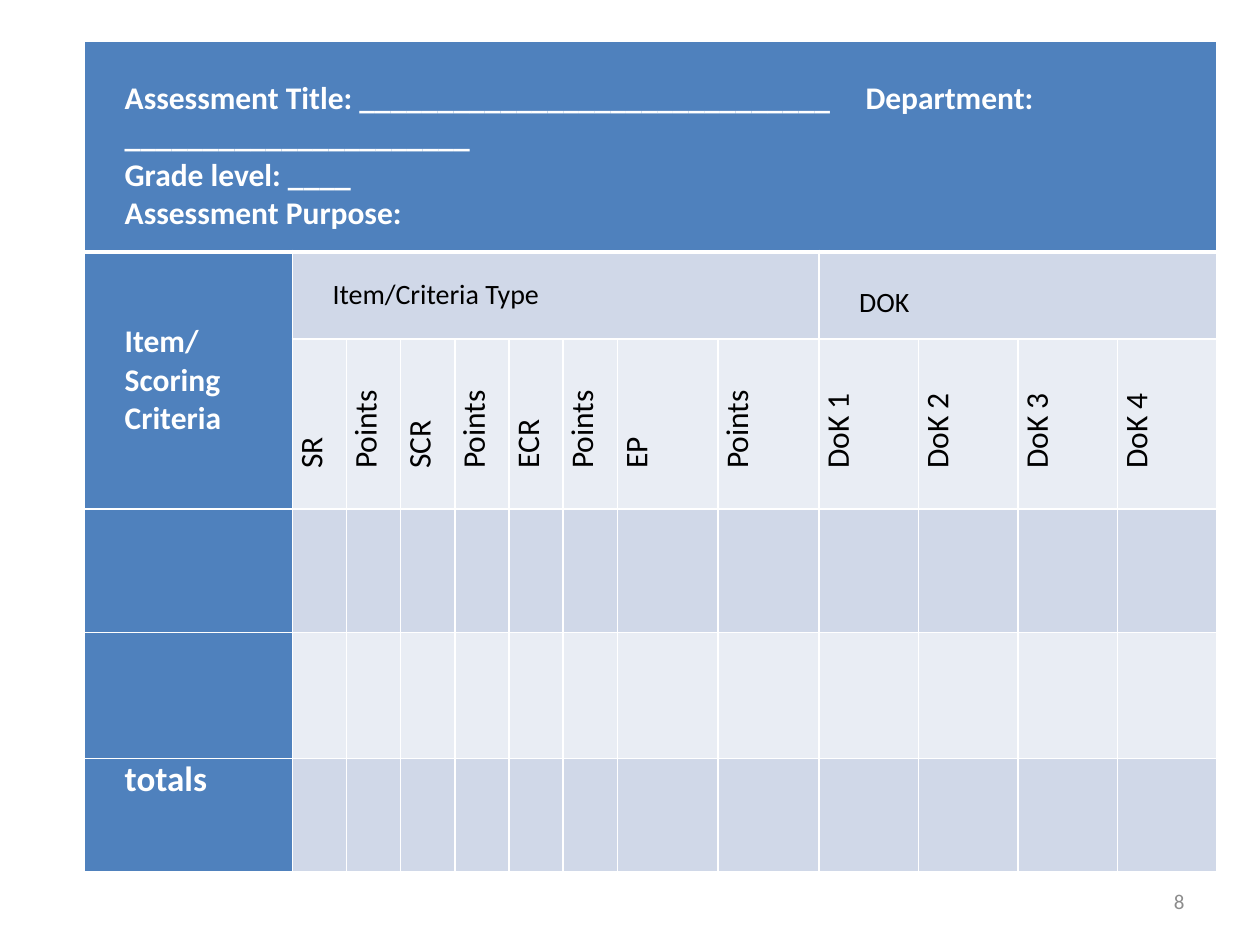
from lxml.etree import SubElement
from pptx import Presentation
from pptx.dml.color import RGBColor
from pptx.enum.text import MSO_ANCHOR as ANCHOR, PP_ALIGN as ALIGN
from pptx.oxml.ns import qn
from pptx.util import Inches, Pt

BLUE = RGBColor(0x4F, 0x81, 0xBD)
BAND_DARK = RGBColor(0xD0, 0xD8, 0xE8)
BAND_LIGHT = RGBColor(0xE9, 0xED, 0xF4)
WHITE = RGBColor(0xFF, 0xFF, 0xFF)
BLACK = RGBColor(0, 0, 0)
GRAY = RGBColor(0x8C, 0x8C, 0x8C)

COL_WIDTHS = [1.65] + [0.43] * 6 + [0.8] * 2 + [0.79] * 4
ROW_HEIGHTS = [1.67, 0.69, 1.35, 0.98, 1, 0.9]
ITEM_TYPES = ["SR", "SCR", "ECR", "EP"]


def style_cell(cell, fill, bottom_width):
    tcPr = cell._tc.get_or_add_tcPr()
    for side in ("lnL", "lnR", "lnT", "lnB"):
        width = bottom_width if side == "lnB" else 1
        ln = SubElement(tcPr, qn(f"a:{side}"), w=str(Pt(width)))
        SubElement(SubElement(ln, qn("a:solidFill")), qn("a:srgbClr"), val=str(WHITE))
    cell.fill.solid()
    cell.fill.fore_color.rgb = fill
    cell.margin_left = cell.margin_right = Inches(0.07)
    cell.margin_top = cell.margin_bottom = 0


def write_cell(cell, lines, size, color, bold=False, anchor=ANCHOR.MIDDLE, indent=0.25):
    cell.vertical_anchor = anchor
    tf = cell.text_frame
    for i, line in enumerate(lines):
        p = tf.paragraphs[0] if i == 0 else tf.add_paragraph()
        p._p.get_or_add_pPr().set("marL", str(Inches(indent)))
        r = p.add_run()
        r.text = line
        r.font.name = "Calibri"
        r.font.size = Pt(size)
        r.font.bold = bold
        r.font.color.rgb = color


prs = Presentation()
prs.slide_width = Inches(10)
prs.slide_height = Inches(7.5)
s = prs.slides.add_slide(prs.slide_layouts[6])

table = s.shapes.add_table(
    len(ROW_HEIGHTS), len(COL_WIDTHS),
    Inches(0.67), Inches(0.33), Inches(9), Inches(6.59),
).table
for col, width in zip(table.columns, COL_WIDTHS):
    col.width = Inches(width)
for row, height in zip(table.rows, ROW_HEIGHTS):
    row.height = Inches(height)

for i, row in enumerate(table.rows):
    for j, cell in enumerate(row.cells):
        if i == 0 or j == 0:
            fill = BLUE
        else:
            fill = BAND_DARK if i % 2 else BAND_LIGHT
        style_cell(cell, fill, 3 if i == 0 else 1)

header = table.cell(0, 0)
header.merge(table.cell(0, 12))
header.margin_left = Inches(0.32)
header.margin_top = Inches(0.3)
write_cell(header, [
    "Assessment Title: " + "_" * 30 + "\tDepartment: " + "_" * 22,
    "Grade level: ____",
    "Assessment Purpose:",
], 18, WHITE, bold=True, anchor=ANCHOR.TOP, indent=0)
pPr = header.text_frame.paragraphs[0]._p.get_or_add_pPr()
SubElement(SubElement(pPr, qn("a:tabLst")), qn("a:tab"), pos=str(Inches(5.88)), algn="l")

criteria = table.cell(1, 0)
criteria.merge(table.cell(2, 0))
write_cell(criteria, ["Item/", "Scoring Criteria"], 18, WHITE, bold=True)

item_type = table.cell(1, 1)
item_type.merge(table.cell(1, 8))
write_cell(item_type, ["Item/Criteria Type"], 16, BLACK)

dok = table.cell(1, 9)
dok.merge(table.cell(1, 12))
dok.margin_top = Inches(0.27)
write_cell(dok, ["DOK"], 16, BLACK, anchor=ANCHOR.TOP)

labels = [label for item in ITEM_TYPES for label in (item, "Points")]
labels += [f"DoK {level}" for level in range(1, 5)]
for j, label in enumerate(labels, start=1):
    cell = table.cell(2, j)
    cell._tc.get_or_add_tcPr().set("vert", "vert270")
    write_cell(cell, [label], 18, BLACK)

write_cell(table.cell(5, 0), ["totals"], 20, WHITE, bold=True, anchor=ANCHOR.TOP)

number = s.shapes.add_textbox(Inches(7.17), Inches(6.95), Inches(2.33), Inches(0.4))
tf = number.text_frame
tf.word_wrap = True
tf.vertical_anchor = ANCHOR.MIDDLE
p = tf.paragraphs[0]
p.alignment = ALIGN.RIGHT
r = p.add_run()
r.text = "8"
r.font.name = "Calibri"
r.font.size = Pt(12)
r.font.color.rgb = GRAY

prs.save("out.pptx")
